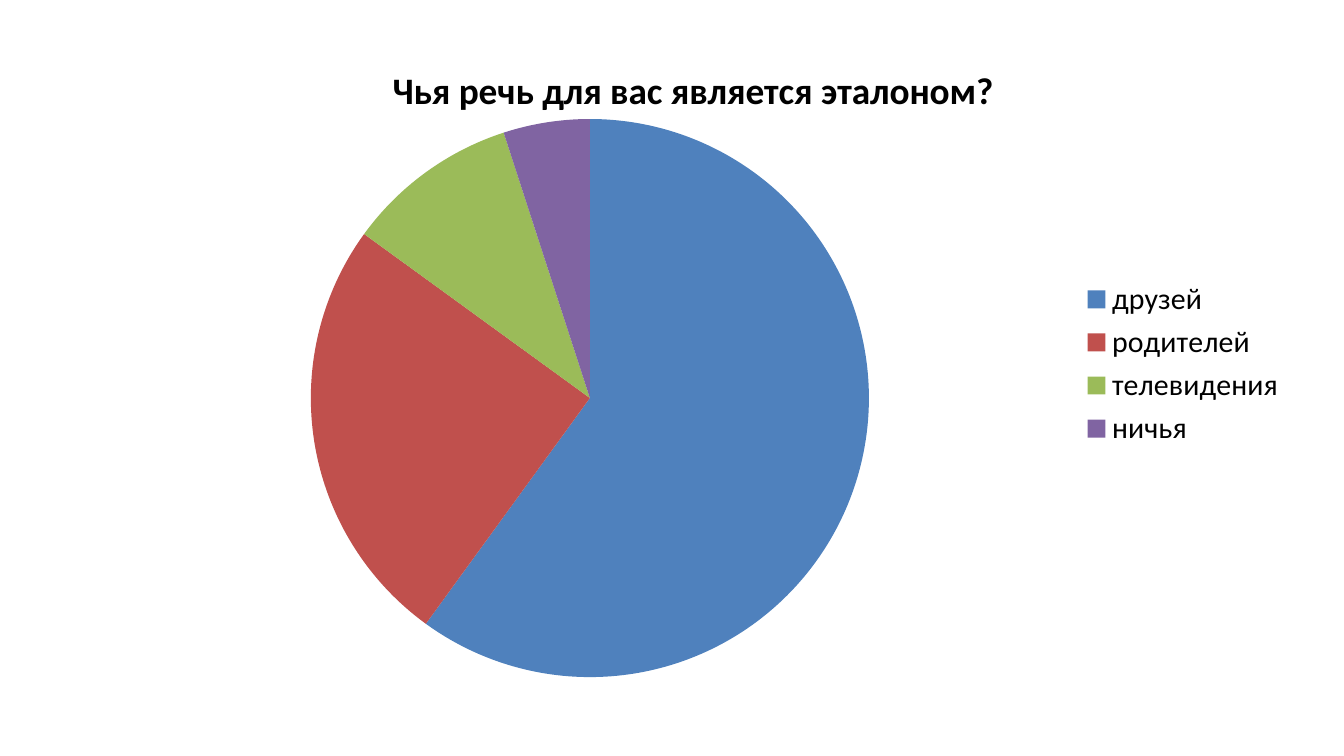
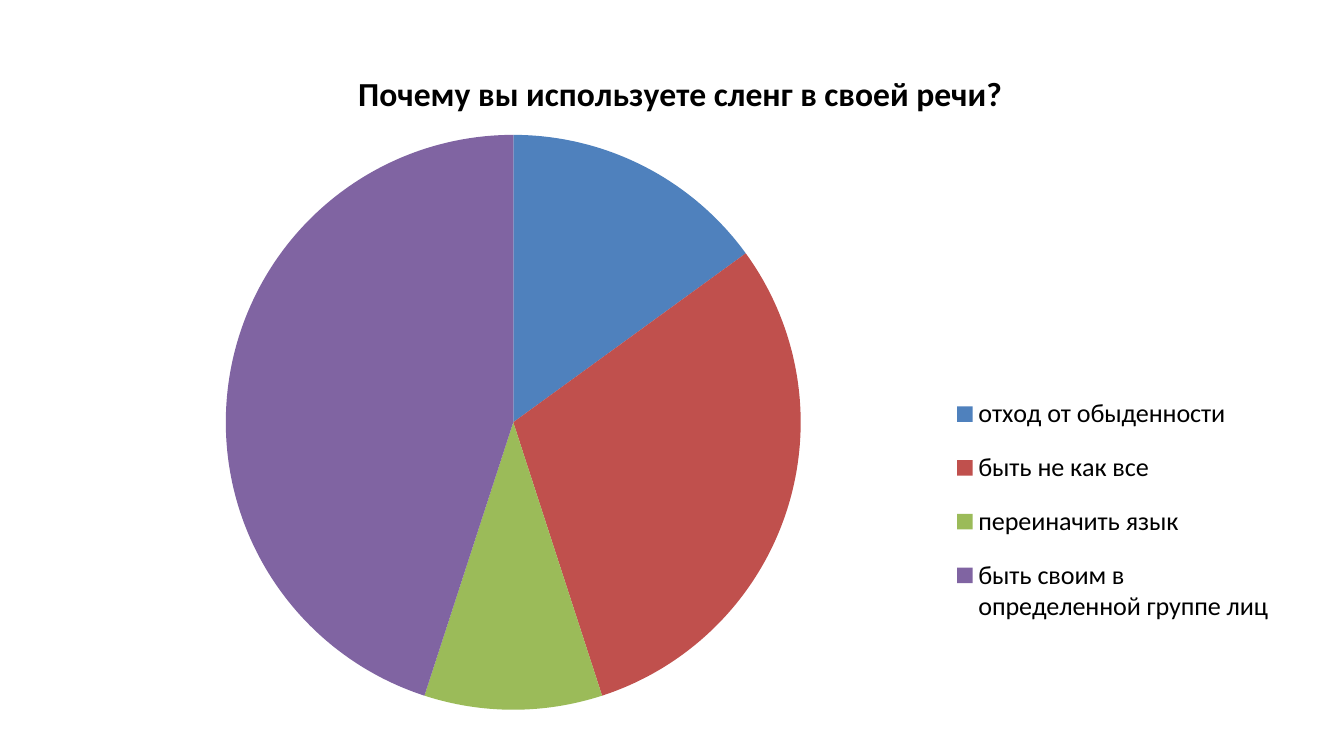
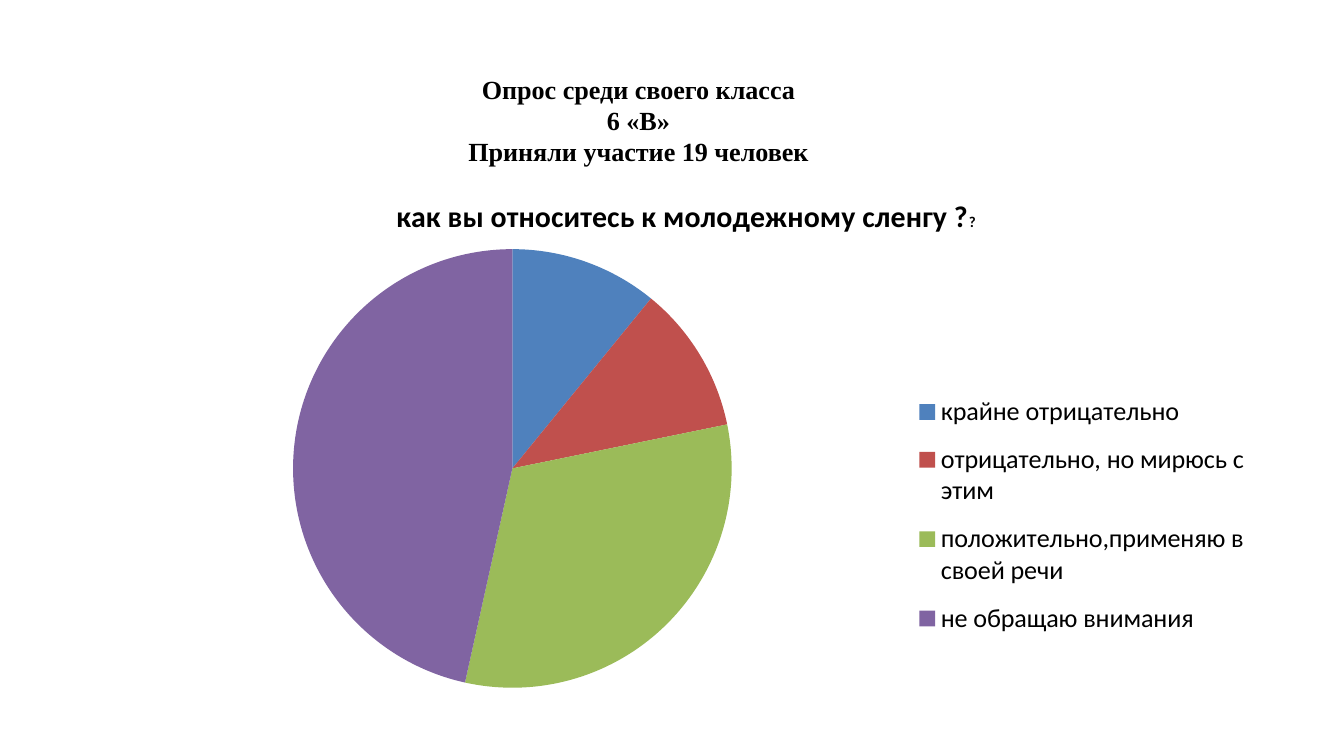
from lxml.etree import SubElement
from pptx import Presentation
from pptx.chart.data import CategoryChartData
from pptx.dml.color import RGBColor
from pptx.enum.chart import XL_CHART_TYPE, XL_LEGEND_POSITION
from pptx.enum.text import MSO_ANCHOR, MSO_AUTO_SIZE, PP_ALIGN
from pptx.oxml.ns import qn
from pptx.util import Pt

BLACK = RGBColor(0x00, 0x00, 0x00)
SLICE_COLORS = [
    RGBColor(0x4F, 0x81, 0xBD),
    RGBColor(0xC0, 0x50, 0x4D),
    RGBColor(0x9B, 0xBB, 0x59),
    RGBColor(0x80, 0x64, 0xA2),
]
CHART_FONT = "Calibri"
HEADING_FONT = "Times New Roman"
TITLE_ONLY, BLANK = 5, 6

# Each box is left, top, width, height in points on the slide
SURVEY = [
    {
        "question": [("Чья речь для вас является эталоном? ", 40)],
        "series": "Series 1",
        "answers": {"друзей": 60, "родителей ": 25, "телевидения": 10, "ничья ": 5},
        "frame": (108, 45, 1278, 690),
        "pie": (333, 127.5, 598, 598),
        "legend": None,
        "legend_size": 32,
    },
    {
        "question": [("Почему вы используете сленг в своей речи?", 36)],
        "series": "Почему вы используете сленг в своей речи?",
        "answers": {
            "отход от обыденности": 15,
            "быть не как все": 30,
            "переиначить язык": 10,
            "быть своим в определенной группе лиц": 45,
        },
        "frame": (90, 51, 1278, 720),
        "pie": (242, 144.5, 616, 616),
        "legend": (1016, 403, 352, 288),
        "legend_size": 28,
    },
    {
        "heading": ["Опрос среди своего класса", "6 «В»", "Приняли участие 19 человек"],
        "question": [("как вы относитесь к молодежному сленгу ?", 32), ("?", 16)],
        "series": "Series 1",
        "answers": {
            "крайне отрицательно": 11,
            "отрицательно, но мирюсь с этим": 11,
            "положительно,применяю в своей речи": 32,
            "не обращаю внимания": 47,
        },
        "frame": (120, 195, 1230, 552),
        "pie": (314, 267, 470, 470),
        "legend": (968, 407, 382, 290),
        "legend_size": 28,
    },
]


def style_font(font, name, size, bold):
    font.name = name
    font.size = Pt(size)
    font.bold = bold
    font.color.rgb = BLACK


def place_in_chart(part, index, box, frame, inner=False):
    """Fix a chart part at a slide box, given as fractions of the chart frame."""
    for old_layout in part.findall(qn("c:layout")):
        part.remove(old_layout)
    layout = SubElement(part, qn("c:layout"))
    part.insert(index, layout)
    manual = SubElement(layout, qn("c:manualLayout"))
    if inner:
        SubElement(manual, qn("c:layoutTarget")).set("val", "inner")
    for tag in ("xMode", "yMode"):
        SubElement(manual, qn(f"c:{tag}")).set("val", "edge")
    left, top, width, height = frame
    fractions = {
        "x": (box[0] - left) / width,
        "y": (box[1] - top) / height,
        "w": box[2] / width,
        "h": box[3] / height,
    }
    for tag, fraction in fractions.items():
        SubElement(manual, qn(f"c:{tag}")).set("val", f"{fraction:.4f}")


prs = Presentation()
prs.slide_width, prs.slide_height = Pt(1440), Pt(810)

for poll in SURVEY:
    heading_lines = poll.get("heading")
    slide = prs.slides.add_slide(prs.slide_layouts[TITLE_ONLY if heading_lines else BLANK])

    # Heading above the chart
    if heading_lines:
        heading = slide.shapes.title
        heading.left, heading.top, heading.width, heading.height = Pt(72), Pt(74), Pt(1224), Pt(109)
        frame_text = heading.text_frame
        frame_text.text = "\n".join(heading_lines)
        frame_text.word_wrap = True
        frame_text.auto_size = MSO_AUTO_SIZE.NONE
        frame_text.vertical_anchor = MSO_ANCHOR.MIDDLE
        for line in frame_text.paragraphs:
            line.alignment = PP_ALIGN.CENTER
            line.space_before = Pt(0)
            style_font(line.runs[0].font, HEADING_FONT, 28, True)

    # Pie of answers
    answers = CategoryChartData()
    answers.categories = list(poll["answers"])
    answers.add_series(poll["series"], list(poll["answers"].values()))
    frame = poll["frame"]
    chart = slide.shapes.add_chart(
        XL_CHART_TYPE.PIE, *(Pt(length) for length in frame), answers
    ).chart
    style_font(chart.font, CHART_FONT, 10, False)
    pie = chart.plots[0]
    pie.vary_by_categories = True
    for number, color in enumerate(SLICE_COLORS):
        fill = pie.series[0].points[number].format.fill
        fill.solid()
        fill.fore_color.rgb = color
    plot_area = chart._chartSpace.find(qn("c:chart")).find(qn("c:plotArea"))
    place_in_chart(plot_area, 0, poll["pie"], frame, inner=True)

    # Question as the chart title
    chart.has_title = True
    chart.chart_title.include_in_layout = False
    question = chart.chart_title.text_frame.paragraphs[0]
    for wording, size in poll["question"]:
        run = question.add_run()
        run.text = wording
        style_font(run.font, CHART_FONT, size, True)

    # Legend
    chart.has_legend = True
    legend = chart.legend
    legend.position = XL_LEGEND_POSITION.RIGHT
    legend.include_in_layout = False
    style_font(legend.font, CHART_FONT, poll["legend_size"], False)
    if poll["legend"]:
        place_in_chart(legend._element, 1, poll["legend"], frame)

prs.save("out.pptx")
